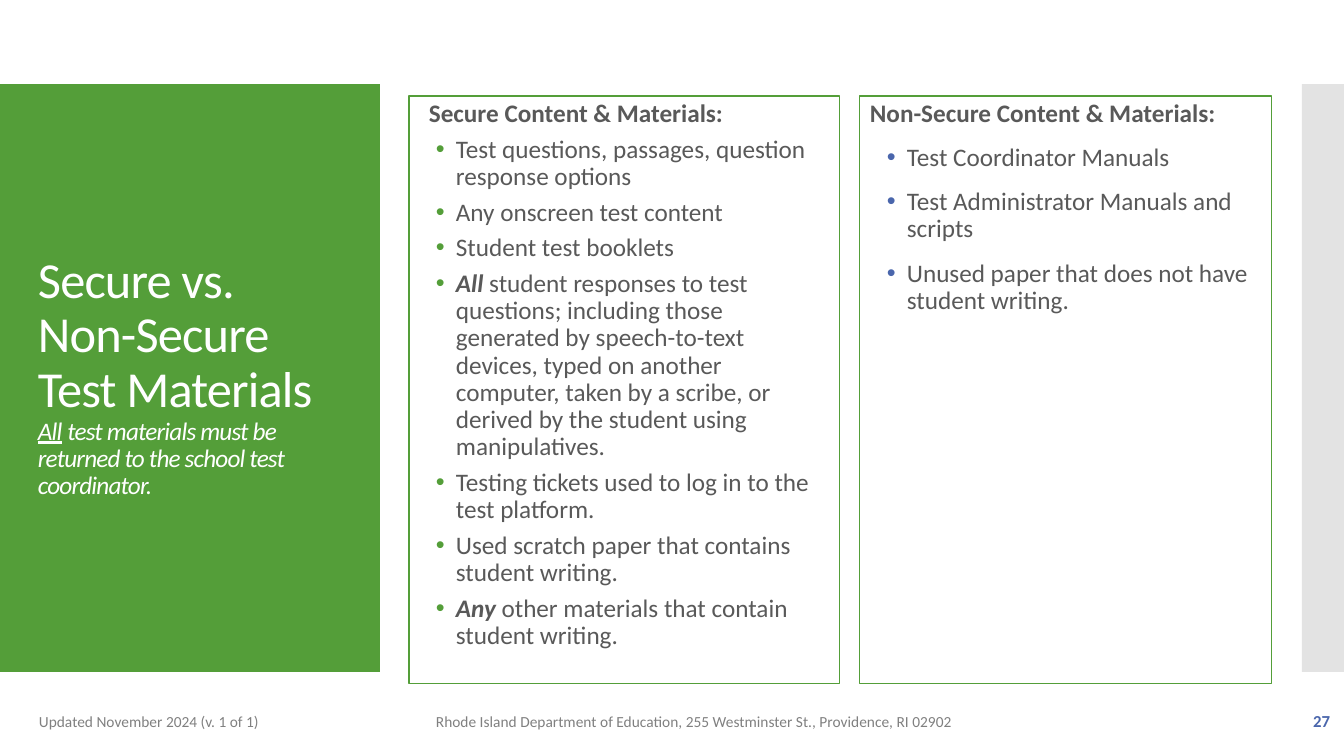
from lxml.etree import SubElement
from pptx import Presentation
from pptx.dml.color import RGBColor
from pptx.enum.shapes import MSO_SHAPE
from pptx.enum.text import MSO_ANCHOR, PP_ALIGN
from pptx.oxml.ns import qn
from pptx.util import Pt

PX = 914400 / 100.8
COLORS = {"green": "549E39", "gray": "C8C8C8", "white": "FFFFFF",
          "text": "595959", "footer": "808080", "blue": "4A66AC"}
BOLD_ITALIC = {"bold": True, "italic": True}

deck = Presentation()
deck.slide_width, deck.slide_height = round(1344 * PX), round(756 * PX)
page = deck.slides.add_slide(deck.slide_layouts[6])


def add_box(left, top, width, height, fill=None, line=None):
    """Add a rectangle if it has a fill or line, otherwise a text box."""
    place = [round(n * PX) for n in (left, top, width, height)]
    if fill or line:
        box = page.shapes.add_shape(MSO_SHAPE.RECTANGLE, *place)
        box.shadow.inherit = False
        if fill:
            box.fill.solid()
            box.fill.fore_color.rgb = RGBColor.from_string(COLORS[fill])
            box.line.fill.background()
        else:
            box.fill.background()
            box.line.color.rgb = RGBColor.from_string(COLORS[line])
            box.line.width = Pt(0.75)
    else:
        box = page.shapes.add_textbox(*place)
    box.text_frame.word_wrap = True
    box.text_frame.vertical_anchor = MSO_ANCHOR.TOP if line else MSO_ANCHOR.MIDDLE
    return box


def add_spans(para, spans, size, color, layout):
    """Fill a paragraph with (text, font format) pairs; "\\n" breaks the line."""
    for name, value in layout.items():
        setattr(para, name, value)
    for text, style in spans:
        if text == "\n":
            para.add_line_break()
            continue
        span = para.add_run()
        span.text = text
        span.font.color.rgb = RGBColor.from_string(COLORS[color])
        for name, value in {"name": "Calibri", "size": Pt(size), **style}.items():
            setattr(span.font, name, value)


# Side panels
add_box(0, 84, 380, 588, fill="green")
right_band = add_box(1302, 84, 42, 588, fill="gray")
band_color = right_band.fill._xPr.find(qn("a:solidFill"))[0]
SubElement(band_color, qn("a:alpha"), val="50000")

# Title
title = add_box(28, 124, 325, 507).text_frame.paragraphs[0]
subtitle = {"size": Pt(18), "italic": True}
add_spans(title, [
    ("Secure vs. ", {}), ("\n", {}),
    ("Non-Secure Test Materials", {}), ("\n", {}),
    ("All", {**subtitle, "underline": True}),
    (" test materials must be returned to the school test coordinator.", subtitle),
], 36, "white", {"line_spacing": 0.9, "alignment": PP_ALIGN.LEFT})
for span in title.runs:
    span.font._element.set("spc", "-60")

# Material lists: left, width, heading indent, space before, space after, bullet colour
material_lists = [
    (409, 431, 10, 3, 3, "green", "Secure Content & Materials:", [
        [("Test questions, passages, question response options", {})],
        [("Any onscreen test content", {})],
        [("Student test booklets", {})],
        [("All", BOLD_ITALIC),
         (" student responses to test questions; including those generated by "
          "speech-to-text devices, typed on another computer, taken by a scribe, "
          "or derived by the student using manipulatives.", {})],
        [("Testing tickets used to log in to the test platform.", {})],
        [("Used scratch paper that contains student writing.", {})],
        [("Any", BOLD_ITALIC), (" other materials that contain student writing.", {})],
    ]),
    (860, 412, 0, 12, 0, "blue", "Non-Secure Content & Materials:", [
        [("Test Coordinator Manuals", {})],
        [("Test Administrator Manuals and scripts", {})],
        [("Unused paper that does not have student writing.", {})],
    ]),
]
for left, width, indent, before, after, bullet, heading, items in material_lists:
    frame = add_box(left, 96, width, 588, line="green").text_frame
    layout = {"line_spacing": 0.9, "space_before": Pt(before),
              "space_after": Pt(after), "alignment": PP_ALIGN.LEFT}
    head = frame.paragraphs[0]
    add_spans(head, [(heading, {"bold": True})], 18, "text", layout)
    head._p.get_or_add_pPr().set("marL", str(round(indent * PX)))
    for item in items:
        para = frame.add_paragraph()
        add_spans(para, item, 18, "text", layout)
        properties = para._p.get_or_add_pPr()
        properties.set("marL", str(round(37 * PX)))
        properties.set("indent", str(round(-20 * PX)))
        bullet_color = SubElement(properties, qn("a:buClr"))
        SubElement(bullet_color, qn("a:srgbClr"), val=COLORS[bullet])
        SubElement(properties, qn("a:buFont"), typeface="Arial")
        SubElement(properties, qn("a:buChar"), char="•")

# Footer
footers = [
    (29, 302, "Updated November 2024 (v. 1 of 1)", 11, "footer", False, PP_ALIGN.LEFT),
    (426, 651, "Rhode Island Department of Education, 255 Westminster St., "
     "Providence, RI 02902", 11, "footer", False, PP_ALIGN.LEFT),
    (1172, 168, "27", 12, "blue", True, PP_ALIGN.RIGHT),
]
for left, width, text, size, color, bold, alignment in footers:
    para = add_box(left, 701, width, 40).text_frame.paragraphs[0]
    add_spans(para, [(text, {"bold": bold})], size, color, {"alignment": alignment})

deck.save("out.pptx")
